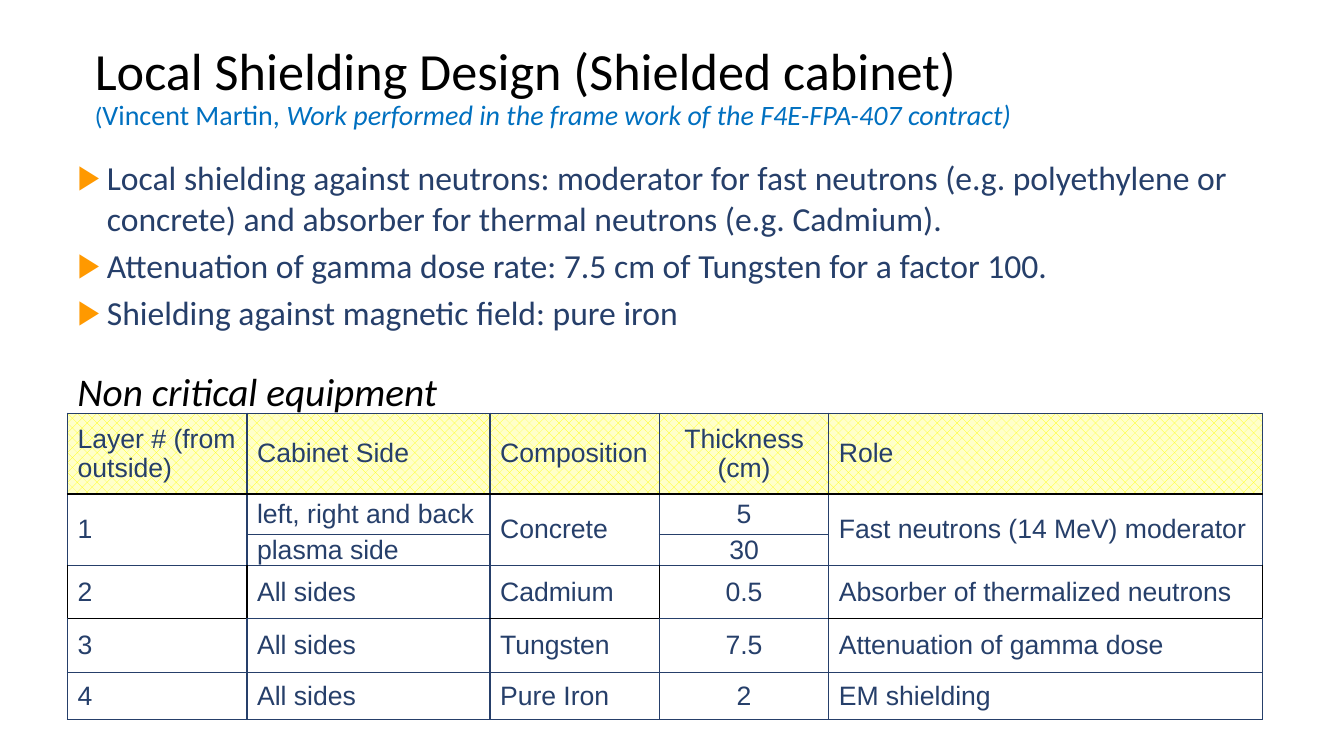
from lxml import etree
from pptx import Presentation
from pptx import util as u
from pptx.dml.color import RGBColor
from pptx.enum import dml, text
from pptx.oxml.ns import qn

NAVY, BLACK, BLUE, ORANGE = "263F6A", "000000", "0070C0", "FF9900"

# Content
TITLE = "Local Shielding Design (Shielded cabinet)"
CREDIT = [("(", 18, False), ("Vincent Martin, ", 20, False),
          ("Work performed in the frame work of the F4E-FPA-407 contract)", 20, True)]
POINTS = [
    "Local shielding against neutrons: moderator for fast neutrons "
    "(e.g. polyethylene or concrete) and absorber for thermal neutrons (e.g. Cadmium).",
    "Attenuation of gamma dose rate: 7.5 cm of Tungsten for a factor 100.",
    "Shielding against magnetic field: pure iron",
]
CAPTION = "Non critical equipment"
LAYERS = [
    ("Layer # (from outside)", "Cabinet Side", "Composition", "Thickness (cm)", "Role"),
    ("1", "left, right and back", "Concrete", "5", "Fast neutrons (14 MeV) moderator"),
    (None, "plasma side", None, "30", None),
    ("2", "All sides", "Cadmium", "0.5", "Absorber of thermalized neutrons"),
    ("3", "All sides", "Tungsten", "7.5", "Attenuation of gamma dose"),
    ("4", "All sides", "Pure Iron", "2", "EM shielding"),
]

# Grid, in inches
LEFT = 0.67
COLS = [1.78, 2.41, 1.68, 1.68, 4.3]
ROWS = [0.8, 0.4, 0.31, 0.53, 0.53, 0.47]
AL = text.PP_ALIGN
ALIGN = [AL.LEFT, AL.JUSTIFY, AL.JUSTIFY, AL.CENTER, AL.LEFT]


def rgb(code):
    return RGBColor.from_string(code)


def put(para, words, size, color, font="Calibri", ital=False):
    run = para.add_run()
    run.text = words
    f = run.font
    f.name, f.size, f.italic = font, u.Pt(size), ital
    f.color.rgb = rgb(color)


def place(shape, *box):
    shape.left, shape.top, shape.width, shape.height = map(u.Inches, box)


def bullet(para):
    props = para._p.get_or_add_pPr()
    props.set("marL", str(u.Inches(0.29)))
    props.set("indent", str(-u.Inches(0.29)))
    tint = etree.SubElement(props, qn("a:buClr"))
    etree.SubElement(tint, qn("a:srgbClr"), val=ORANGE)
    etree.SubElement(props, qn("a:buFont"), typeface="Arial")
    etree.SubElement(props, qn("a:buChar"), char="▶")


def edge(row, col, side):
    """Colour of a cell's right or bottom edge."""
    head = row == 0 and side == "B"
    dark = row == 3 and col % 2 == 0
    return BLACK if head or dark else NAVY


def border(cell, row, col):
    tints = {"L": edge(row, col - 1, "R") if col else edge(row, col, "R"),
             "R": edge(row, col, "R"),
             "T": edge(row - 1, col, "B") if row else NAVY,
             "B": edge(row, col, "B")}
    props = cell._tc.get_or_add_tcPr()
    for i, (side, tint) in enumerate(tints.items()):
        line = etree.Element(qn("a:ln" + side), w=str(u.Pt(1)))
        fill = etree.SubElement(line, qn("a:solidFill"))
        etree.SubElement(fill, qn("a:srgbClr"), val=tint)
        props.insert(i, line)


deck = Presentation()
deck.slide_width, deck.slide_height = u.Inches(13.33), u.Inches(7.5)
slide = deck.slides.add_slide(deck.slide_layouts[1])

# Title and credit
title = slide.shapes.title
place(title, 0.84, 0.26, 11.67, 1.24)
title.text_frame.auto_size = text.MSO_AUTO_SIZE.NONE
title.text_frame.vertical_anchor = text.MSO_ANCHOR.MIDDLE
para = title.text_frame.paragraphs[0]
para.alignment, para.line_spacing = AL.LEFT, 0.9
put(para, TITLE, 37.3, BLACK)
para.add_line_break()
for words, size, ital in CREDIT:
    put(para, words, size, BLUE, ital=ital)

# Bullet list
body = slide.placeholders[1]
place(body, LEFT, 1.51, 12.4, 5.31)
frame = body.text_frame
frame.auto_size = text.MSO_AUTO_SIZE.NONE
for i, point in enumerate(POINTS):
    para = frame.add_paragraph() if i else frame.paragraphs[0]
    bullet(para)
    put(para, point, 24, NAVY)

# Layer table
table = slide.shapes.add_table(len(ROWS), len(COLS), *map(
    u.Inches, (LEFT, 4.1, sum(COLS), sum(ROWS)))).table
table.first_row = table.horz_banding = False
for col, wide in zip(table.columns, COLS):
    col.width = u.Inches(wide)
for row, high in zip(table.rows, ROWS):
    row.height = u.Inches(high)
for r, layer in enumerate(LAYERS):
    for c, words in enumerate(layer):
        cell = table.cell(r, c)
        cell.margin_top = cell.margin_bottom = 0
        cell.margin_left = cell.margin_right = u.Inches(0.1)
        cell.vertical_anchor = text.MSO_ANCHOR.MIDDLE
        if r:
            cell.fill.background()
        else:
            cell.fill.patterned()
            cell.fill.pattern = dml.MSO_PATTERN.PERCENT_30
            cell.fill.fore_color.rgb = rgb("FFFF00")
            cell.fill.back_color.rgb = rgb("FFFFCA")
        border(cell, r, c)
        if words is None:
            table.cell(r - 1, c).merge(cell)
            continue
        para = cell.text_frame.paragraphs[0]
        para.alignment, para.space_after = ALIGN[c], u.Pt(3)
        put(para, words, 19, NAVY, "Arial")

# Table caption
note = slide.shapes.add_textbox(*map(u.Inches, (LEFT, 3.59, 3.85, 0.57)))
note.text_frame.word_wrap = False
put(note.text_frame.paragraphs[0], CAPTION, 28, BLACK, ital=True)

deck.save("out.pptx")
